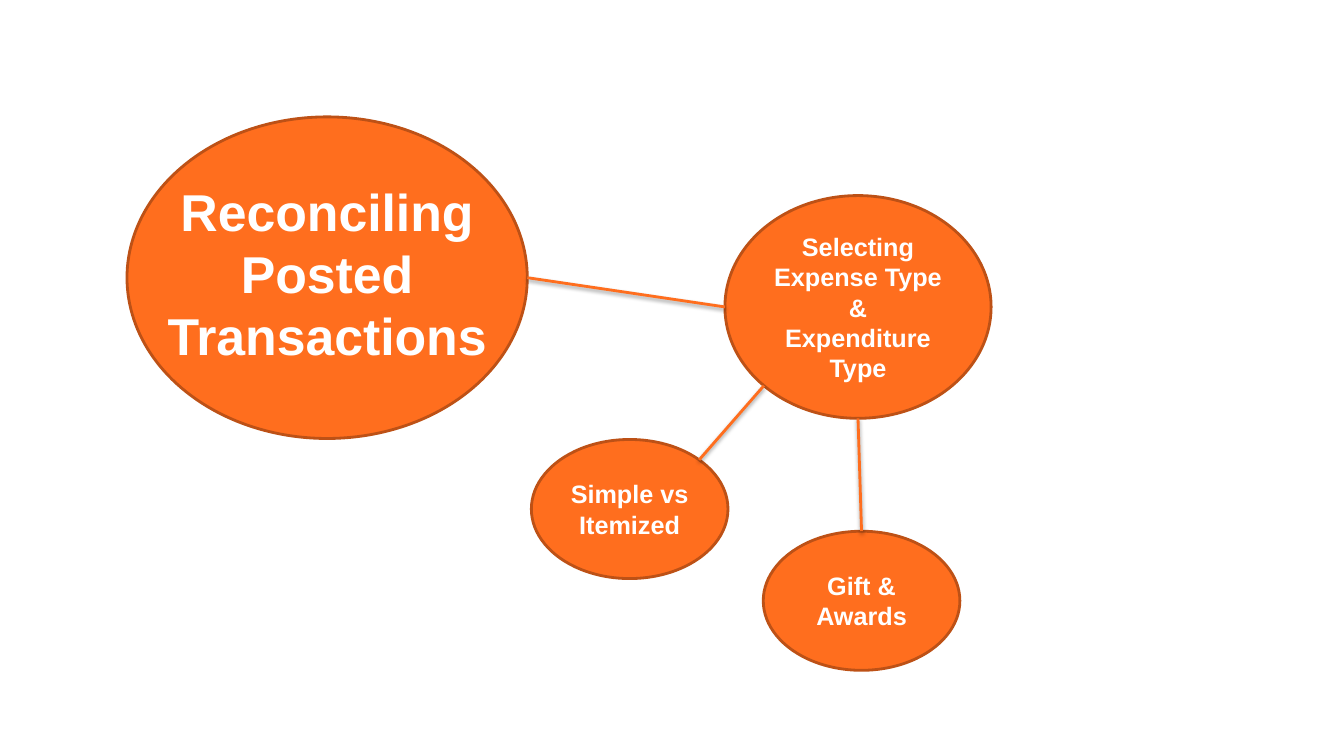
"""Build a bubble map about reconciling posted transactions."""
from dataclasses import dataclass
from math import cos, radians, sin

from lxml import etree
from pptx import Presentation
from pptx.dml.color import RGBColor
from pptx.enum.shapes import MSO_CONNECTOR, MSO_SHAPE
from pptx.enum.text import MSO_ANCHOR, PP_ALIGN
from pptx.oxml.ns import qn
from pptx.slide import Slide
from pptx.text.text import TextFrame
from pptx.util import Inches, Pt

ORANGE = RGBColor(0xFF, 0x6E, 0x1E)
RUST = RGBColor(0xBD, 0x51, 0x16)
WHITE = RGBColor(0xFF, 0xFF, 0xFF)
ELLIPSE = MSO_SHAPE.OVAL
STRAIGHT = MSO_CONNECTOR.STRAIGHT
CENTER = PP_ALIGN.CENTER
MIDDLE = MSO_ANCHOR.MIDDLE
LINE_WIDTH = Pt(2)
RIGHT, TOP_RIGHT, TOP, LEFT, BOTTOM_LEFT, BOTTOM = 0, 45, 90, 180, 225, 270


@dataclass(frozen=True)
class Bubble:
    """An ellipse in inches with an optional label."""
    left: float
    top: float
    width: float
    height: float
    label: str = ""

    def rim(self, degrees: float) -> tuple[float, float]:
        """Return the rim point at an anticlockwise angle from the right."""
        angle = radians(degrees)
        return (self.left + self.width / 2 * (1 + cos(angle)),
                self.top + self.height / 2 * (1 - sin(angle)))


@dataclass(frozen=True)
class Link:
    """A line between the rims of two bubbles."""
    start: Bubble
    start_angle: float
    end: Bubble
    end_angle: float


RECONCILING = Bubble(1.26, 1.16, 3.97, 3.19)
SELECTING = Bubble(7.19, 1.94, 2.64, 2.21,
                   "Selecting Expense Type & Expenditure Type")
ITEMIZED = Bubble(5.27, 4.36, 1.95, 1.38, "Simple vs Itemized")
AWARDS = Bubble(7.57, 5.27, 1.95, 1.38, "Gift & Awards")
BUBBLES = (RECONCILING, SELECTING, ITEMIZED, AWARDS)
LINKS = (
    Link(RECONCILING, RIGHT, SELECTING, LEFT),
    Link(SELECTING, BOTTOM_LEFT, ITEMIZED, TOP_RIGHT),
    Link(AWARDS, TOP, SELECTING, BOTTOM),
)


def write(frame: TextFrame, text: str, size: float) -> None:
    """Fill a frame with bold white centred text."""
    frame.word_wrap = True
    paragraph = frame.paragraphs[0]
    paragraph.text = text
    paragraph.alignment = CENTER
    font = paragraph.font
    font.name, font.size, font.bold = "Arial", Pt(size), True
    font.color.rgb = WHITE


def draw_bubble(slide: Slide, bubble: Bubble) -> None:
    """Draw an orange ellipse and its label."""
    ellipse = slide.shapes.add_shape(
        ELLIPSE, Inches(bubble.left), Inches(bubble.top),
        Inches(bubble.width), Inches(bubble.height))
    ellipse.shadow.inherit = False
    ellipse.fill.solid()
    ellipse.fill.fore_color.rgb = ORANGE
    ellipse.line.color.rgb = RUST
    ellipse.line.width = LINE_WIDTH
    if bubble.label:
        ellipse.text_frame.vertical_anchor = MIDDLE
        write(ellipse.text_frame, bubble.label, 18)


def draw_link(slide: Slide, link: Link) -> None:
    """Draw an orange line with a soft shadow below it."""
    ends = link.start.rim(link.start_angle) + link.end.rim(link.end_angle)
    line = slide.shapes.add_connector(STRAIGHT, *map(Inches, ends))
    line.line.color.rgb = ORANGE
    line.line.width = LINE_WIDTH
    effects = etree.SubElement(line._element.spPr, qn("a:effectLst"))
    shadow = etree.SubElement(
        effects, qn("a:outerShdw"), blurRad=str(Pt(3.1)), dist=str(Pt(1.6)),
        dir="5400000", rotWithShape="0")
    black = etree.SubElement(shadow, qn("a:srgbClr"), val="000000")
    etree.SubElement(black, qn("a:alpha"), val="38000")


def main() -> None:
    """Build and save the slide."""
    deck = Presentation()
    deck.slide_width, deck.slide_height = Inches(13.33), Inches(7.5)
    slide = deck.slides.add_slide(deck.slide_layouts[6])
    for bubble in BUBBLES:
        draw_bubble(slide, bubble)
    topic = slide.shapes.add_textbox(
        Inches(1.53), Inches(1.73), Inches(3.43), Inches(1.97))
    write(topic.text_frame, "Reconciling Posted Transactions", 37)
    for link in LINKS:
        draw_link(slide, link)
    deck.save("out.pptx")


if __name__ == "__main__":
    main()
